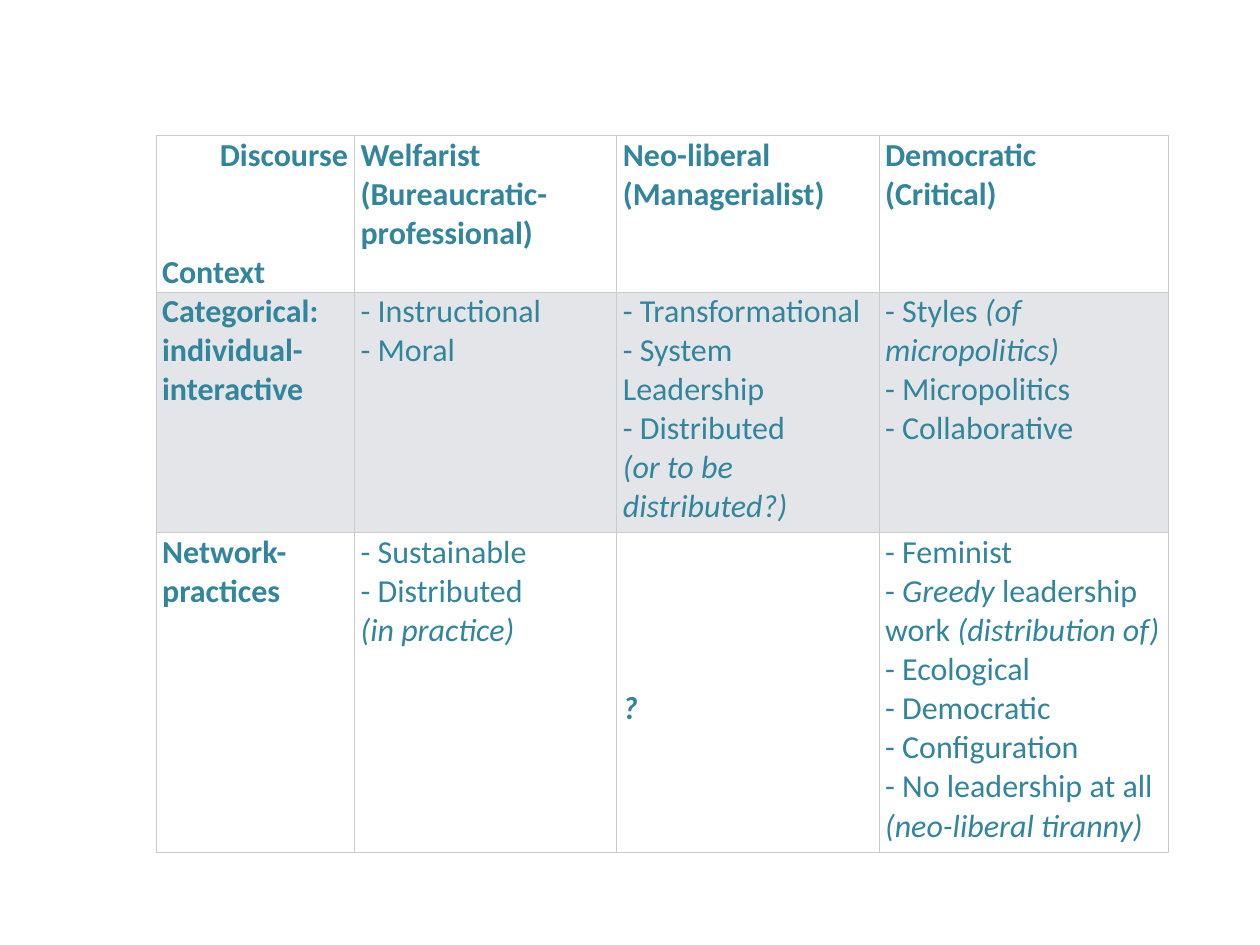
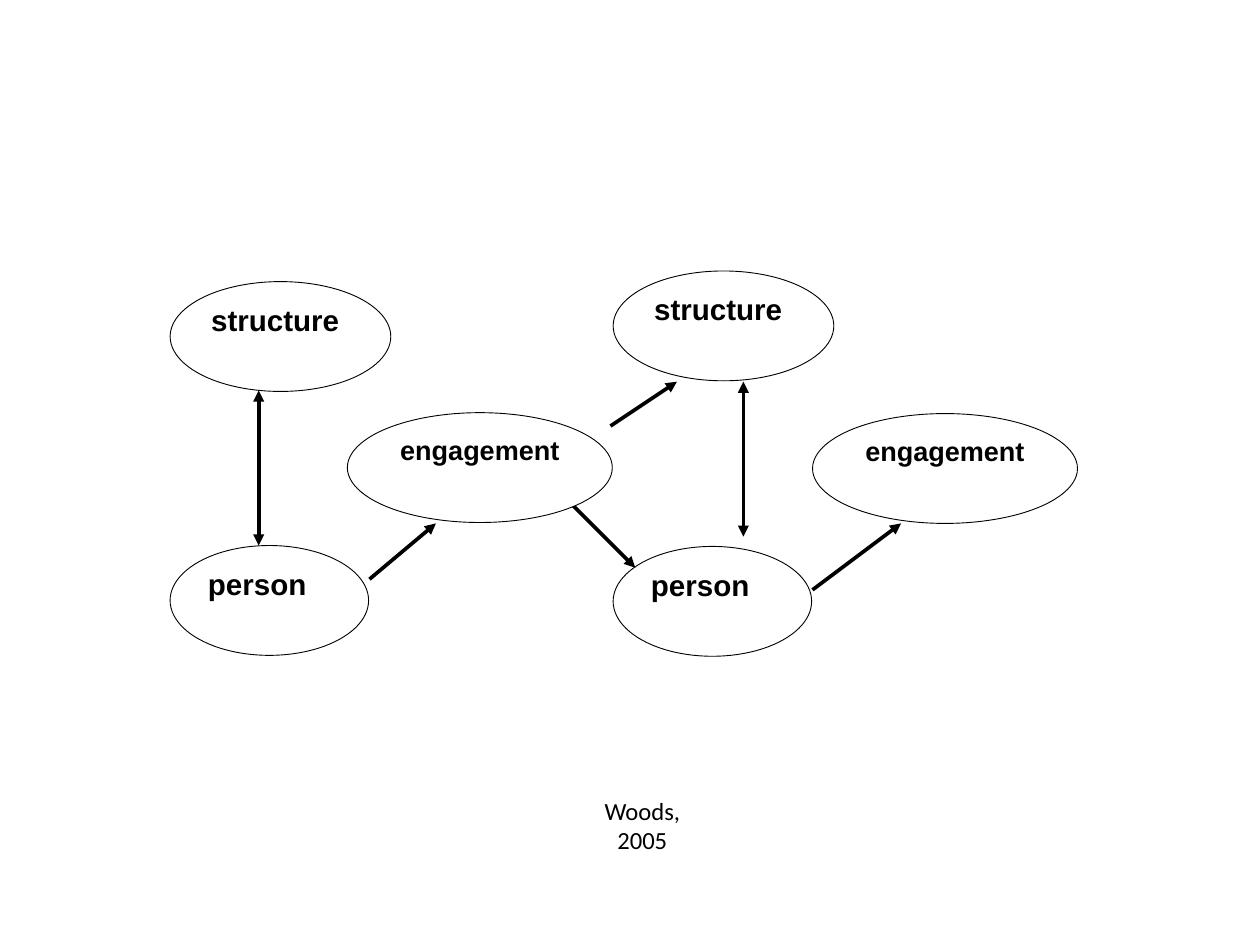
from pptx import Presentation
from pptx.dml.color import RGBColor
from pptx.enum.shapes import MSO_CONNECTOR, MSO_SHAPE
from pptx.enum.text import MSO_ANCHOR, PP_ALIGN
from pptx.oxml.ns import qn
from pptx.util import Inches, Pt
from lxml.etree import SubElement

TEAL = RGBColor(0x31, 0x85, 0x9C)
GREY = RGBColor(0xE3, 0xE5, 0xE8)
WHITE = RGBColor(0xFF, 0xFF, 0xFF)
BLACK = RGBColor(0x00, 0x00, 0x00)
BORDER = "CBCBCB"

# Leadership table: each cell is a list of paragraphs, _italic_ between underscores
COLS = [2.24, 2.96, 2.96, 3.27]
ROWS = [1.76, 2.72, 3.61]
BANDS = [WHITE, GREY, WHITE]
CELLS = [
    [["Discourse", "Context"],
     ["Welfarist (Bureaucratic-professional)"],
     ["Neo-liberal\n(Managerialist)"],
     ["Democratic\n(Critical)"]],
    [["Categorical:\nindividual-interactive"],
     ["- Instructional", "- Moral"],
     ["- Transformational", "- System Leadership", "- Distributed",
      "_(or to be distributed?)_"],
     ["- Styles _(of micropolitics)_", "- Micropolitics", "- Collaborative"]],
    [["Network-practices"],
     ["- Sustainable", "- Distributed", "_(in practice)_"],
     ["_?_"],
     ["- Feminist", "- _Greedy_ leadership work _(distribution of)_",
      "- Ecological", "- Democratic", "- Configuration",
      "- No leadership at all _(neo-liberal tiranny)_"]],
]
BODY_SIZE = 26
LINE_PT = 31.7  # height of one line of body text

# Diagram: width, text size and alignment for each kind of ellipse
KINDS = {
    "structure": (2.49, 24, PP_ALIGN.LEFT),
    "person": (2.24, 24, PP_ALIGN.LEFT),
    "engagement": (2.99, 22, PP_ALIGN.CENTER),
}
ELLIPSE_H = 1.24
BACK = [("person", 6.92, 6.17), ("engagement", 9.17, 4.67)]
FRONT = [("engagement", 3.92, 4.66), ("person", 1.92, 6.16),
         ("structure", 6.92, 3.06), ("structure", 1.92, 3.18)]
# start x, start y, end x, end y, arrowhead at both ends
ARROWS = [
    (2.92, 4.41, 2.92, 6.16, True),
    (8.39, 4.31, 8.39, 6.06, True),
    (4.17, 6.54, 4.92, 5.91, False),
    (6.89, 4.81, 7.64, 4.31, False),
    (9.17, 6.66, 10.17, 5.91, False),
    (6.42, 5.66, 7.17, 6.41, False),
]


def add_run(p, text, font, size, color, bold=False, italic=False):
    r = p.add_run()
    r.text = text
    f = r.font
    f.name, f.size, f.bold, f.italic = font, Pt(size), bold, italic
    f.color.rgb = color


def write_cell(cell, paragraphs, bold):
    tf = cell.text_frame
    for i, text in enumerate(paragraphs):
        p = tf.paragraphs[0] if i == 0 else tf.add_paragraph()
        for j, line in enumerate(text.split("\n")):
            if j:
                p.add_line_break()
            for k, piece in enumerate(line.split("_")):
                if piece:
                    add_run(p, piece, "Calibri", BODY_SIZE, TEAL, bold, k % 2 == 1)


def style_cell(cell, fill):
    cell.margin_left = cell.margin_right = Inches(0.07)
    cell.margin_top = cell.margin_bottom = 0
    tc_pr = cell._tc.get_or_add_tcPr()
    for side in ("a:lnL", "a:lnR", "a:lnT", "a:lnB"):
        ln = SubElement(tc_pr, qn(side), w=str(Pt(0.5)))
        SubElement(SubElement(ln, qn("a:solidFill")), qn("a:srgbClr"), val=BORDER)
    cell.fill.solid()
    cell.fill.fore_color.rgb = fill


def add_leadership_table(s):
    table = s.shapes.add_table(len(ROWS), len(COLS), Inches(1.76), Inches(1.53),
                               Inches(sum(COLS)), Inches(sum(ROWS))).table
    for col, width in zip(table.columns, COLS):
        col.width = Inches(width)
    for i, (height, band) in enumerate(zip(ROWS, BANDS)):
        table.rows[i].height = Inches(height)
        for j, paragraphs in enumerate(CELLS[i]):
            cell = table.cell(i, j)
            style_cell(cell, band)
            write_cell(cell, paragraphs, i == 0 or j == 0 or paragraphs == ["_?_"])
    # Corner cell labels both axes; the question mark sits four lines down
    discourse, context = table.cell(0, 0).text_frame.paragraphs
    discourse.alignment = PP_ALIGN.RIGHT
    context.space_before = Pt(2 * LINE_PT)
    table.cell(2, 2).margin_top = Pt(4 * LINE_PT)


def add_ellipse(s, kind, x, y):
    width, size, align = KINDS[kind]
    sp = s.shapes.add_shape(MSO_SHAPE.OVAL, Inches(x), Inches(y),
                            Inches(width), Inches(ELLIPSE_H))
    sp.shadow.inherit = False
    sp.fill.solid()
    sp.fill.fore_color.rgb = WHITE
    sp.line.color.rgb = BLACK
    sp.line.width = Pt(0.75)
    tf = sp.text_frame
    tf.vertical_anchor = MSO_ANCHOR.TOP
    p = tf.paragraphs[0]
    p.alignment = align
    add_run(p, kind, "Arial", size, BLACK, bold=True)


def add_arrow(s, x1, y1, x2, y2, both):
    cx = s.shapes.add_connector(MSO_CONNECTOR.STRAIGHT, Inches(x1), Inches(y1),
                                Inches(x2), Inches(y2))
    cx.line.color.rgb = BLACK
    cx.line.width = Pt(3)
    ln = cx.line._get_or_add_ln()
    for end in (["a:headEnd"] if both else []) + ["a:tailEnd"]:
        SubElement(ln, qn(end), type="triangle")
    SubElement(cx._element.spPr, qn("a:effectLst"))


def add_citation(s):
    tf = s.shapes.add_textbox(Inches(6.42), Inches(9.02),
                              Inches(1.71), Inches(0.71)).text_frame
    tf.word_wrap = False
    tf.vertical_anchor = MSO_ANCHOR.BOTTOM
    tf.margin_bottom = Inches(0.08)
    tf.margin_right = Inches(0.15)
    p = tf.paragraphs[0]
    p.alignment = PP_ALIGN.CENTER
    add_run(p, "Woods, 2005", "Calibri", 20, BLACK)


def main():
    prs = Presentation()
    prs.slide_width, prs.slide_height = Inches(14.22), Inches(10.67)
    blank = prs.slide_layouts[6]

    # Slide 1: discourses and contexts
    add_leadership_table(prs.slides.add_slide(blank))

    # Slide 2: structure, person and engagement
    s = prs.slides.add_slide(blank)
    for ellipse in BACK:
        add_ellipse(s, *ellipse)
    for arrow in ARROWS:
        add_arrow(s, *arrow)
    for ellipse in FRONT:
        add_ellipse(s, *ellipse)
    add_citation(s)

    prs.save("out.pptx")


if __name__ == "__main__":
    main()
